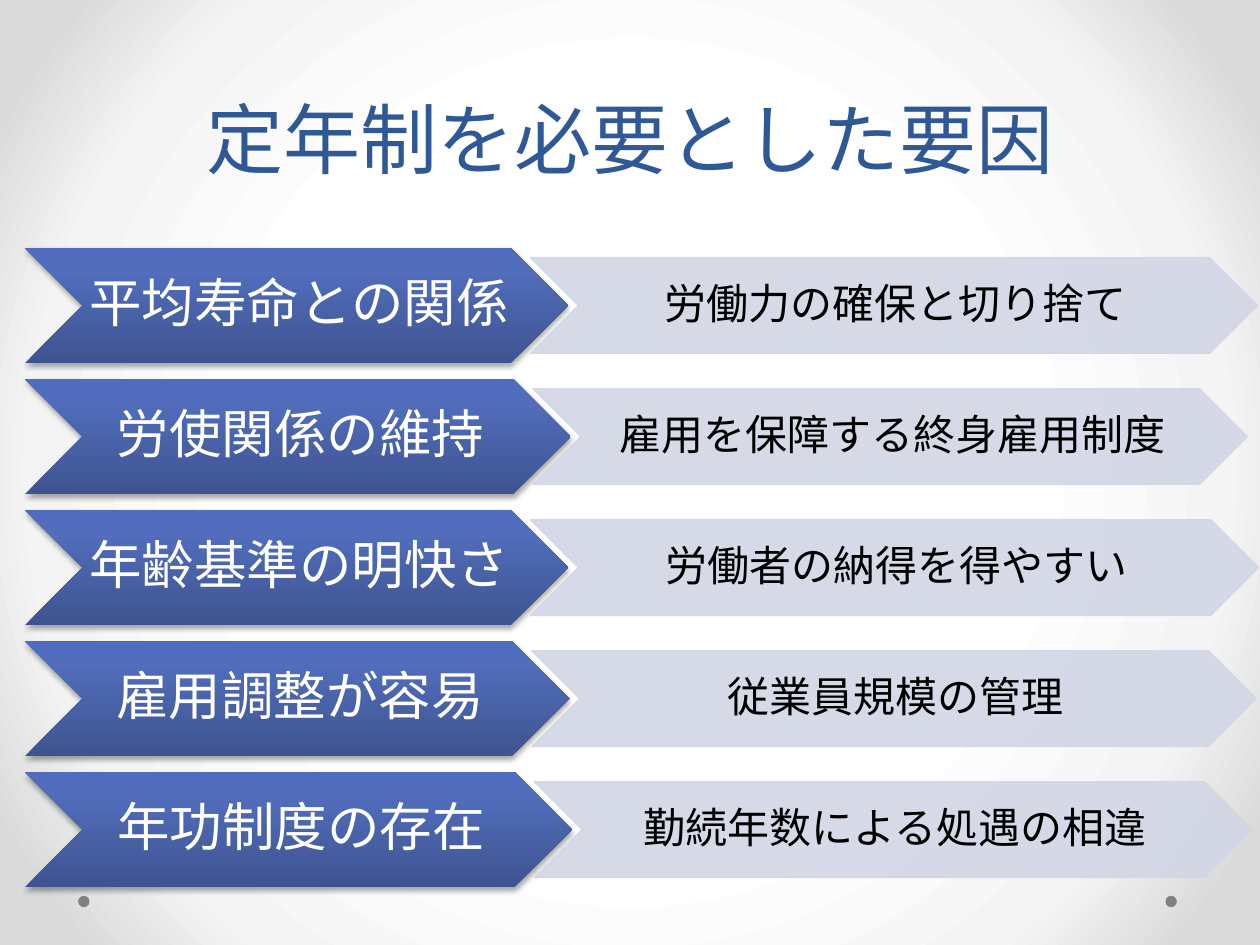
from lxml import etree
from pptx import Presentation
from pptx.dml.color import RGBColor
from pptx.enum.shapes import MSO_SHAPE
from pptx.enum.text import MSO_ANCHOR, PP_ALIGN
from pptx.oxml.ns import qn
from pptx.util import Inches, Pt

CHEVRON = MSO_SHAPE.CHEVRON
OVAL = MSO_SHAPE.OVAL
MIDDLE = MSO_ANCHOR.MIDDLE
BOTTOM = MSO_ANCHOR.BOTTOM
CENTER = PP_ALIGN.CENTER

FONT = "Vollkorn"
BACKGROUND_STOPS = [(50, "FFFFFF"), (76, "F4F4F4"), (92, "DADADA")]
FACTOR_STOPS = [(0, "3E5490"), (80, "516DBB"), (100, "4F6CBE")]
PALE = "D2D6E5"

FIRST_TOP, ROW_PITCH = 1.97, 1.04
FACTOR_LEFT, FACTOR_HEIGHT = 0.2, 0.91
DETAIL_HEIGHT = 0.76
OVERLAP = 0.3

ROWS = [
    ("平均寿命との関係", 4.31, "労働力の確保と切り捨て", 5.77),
    ("労使関係の維持", 4.33, "雇用を保障する終身雇用制度", 5.67),
    ("年齢基準の明快さ", 4.31, "労働者の納得を得やすい", 5.78),
    ("雇用調整が容易", 4.32, "従業員規模の管理", 5.75),
    ("年功制度の存在", 4.34, "勤続年数による処遇の相違", 5.7),
]


def color(value):
    return RGBColor.from_string(value)


def add_child(parent, tag, **attributes):
    child = etree.SubElement(parent, qn(tag))
    for name, value in attributes.items():
        child.set(name, str(value))
    return child


def set_gradient(owner, fill, stops, angle=None):
    fill.gradient()
    gradient = owner.element.find(".//" + qn("a:gradFill"))
    for child in list(gradient):
        gradient.remove(child)
    stop_list = add_child(gradient, "a:gsLst")
    for position, value in stops:
        stop = add_child(stop_list, "a:gs", pos=position * 1000)
        add_child(stop, "a:srgbClr", val=value)
    if angle is None:
        circle = add_child(gradient, "a:path", path="circle")
        add_child(circle, "a:fillToRect", l=50000, t=50000, r=50000, b=50000)
    else:
        add_child(gradient, "a:lin", ang=angle * 60000, scaled=0)


def add_plain_shape(slide, kind, left, top, width, height):
    shape = slide.shapes.add_shape(
        kind, Inches(left), Inches(top), Inches(width), Inches(height))
    shape.shadow.inherit = False
    return shape


def format_paragraph(paragraph, size, value, spacing):
    paragraph.alignment = CENTER
    paragraph.line_spacing = spacing
    paragraph.font.name = FONT
    paragraph.font.size = Pt(size)
    paragraph.font.color.rgb = color(value)


def set_label(shape, text, size, value, left_inset):
    frame = shape.text_frame
    frame.text = text
    frame.word_wrap = False
    frame.vertical_anchor = MIDDLE
    frame.margin_left = Inches(left_inset)
    frame.margin_right = 0
    frame.margin_top = frame.margin_bottom = Inches(0.02)
    format_paragraph(frame.paragraphs[0], size, value, 0.9)


def add_factor(slide, text, top, width):
    factor = add_plain_shape(
        slide, CHEVRON, FACTOR_LEFT, top, width, FACTOR_HEIGHT)
    set_gradient(factor, factor.fill, FACTOR_STOPS, 270)
    factor.line.fill.background()
    effects = factor.element.find(".//" + qn("a:effectLst"))
    shadow = add_child(effects, "a:outerShdw", blurRad=Pt(3.1), dist=Pt(1.8),
                       dir=90 * 60000, rotWithShape=0)
    shade = add_child(shadow, "a:srgbClr", val="000000")
    add_child(shade, "a:alpha", val=35000)
    set_label(factor, text, 30, "FFFFFF", 0.04)


def add_detail(slide, text, left, top, width):
    detail = add_plain_shape(slide, CHEVRON, left, top, width, DETAIL_HEIGHT)
    detail.fill.solid()
    detail.fill.fore_color.rgb = color(PALE)
    detail.line.color.rgb = color(PALE)
    detail.line.width = Pt(0.75)
    for tint in detail.element.spPr.iter(qn("a:srgbClr")):
        add_child(tint, "a:alpha", val=90000)
    set_label(detail, text, 24, "000000", 0.03)


def add_dot(slide, left):
    dot = add_plain_shape(slide, OVAL, left, 7.11, 0.09, 0.09)
    dot.fill.solid()
    dot.fill.fore_color.rgb = color("808080")
    dot.line.fill.background()


def set_title(slide, text):
    title = slide.shapes.title
    title.left, title.top = Inches(0.5), Inches(0.54)
    title.width, title.height = Inches(9), Inches(0.97)
    title.text_frame.text = text
    title.text_frame.vertical_anchor = BOTTOM
    format_paragraph(title.text_frame.paragraphs[0], 44, "2F5897", Pt(58))


def main():
    presentation = Presentation()
    presentation.slide_width = Inches(10)
    presentation.slide_height = Inches(7.5)
    slide = presentation.slides.add_slide(presentation.slide_layouts[5])
    set_gradient(slide, slide.background.fill, BACKGROUND_STOPS)
    for dot_left in (9.25, 0.62):
        add_dot(slide, dot_left)
    for index, (factor, factor_width, detail, detail_width) in enumerate(ROWS):
        top = FIRST_TOP + index * ROW_PITCH
        add_factor(slide, factor, top, factor_width)
        add_detail(slide, detail, FACTOR_LEFT + factor_width - OVERLAP,
                   top + (FACTOR_HEIGHT - DETAIL_HEIGHT) / 2, detail_width)
    set_title(slide, "定年制を必要とした要因")
    presentation.save("out.pptx")


if __name__ == "__main__":
    main()
